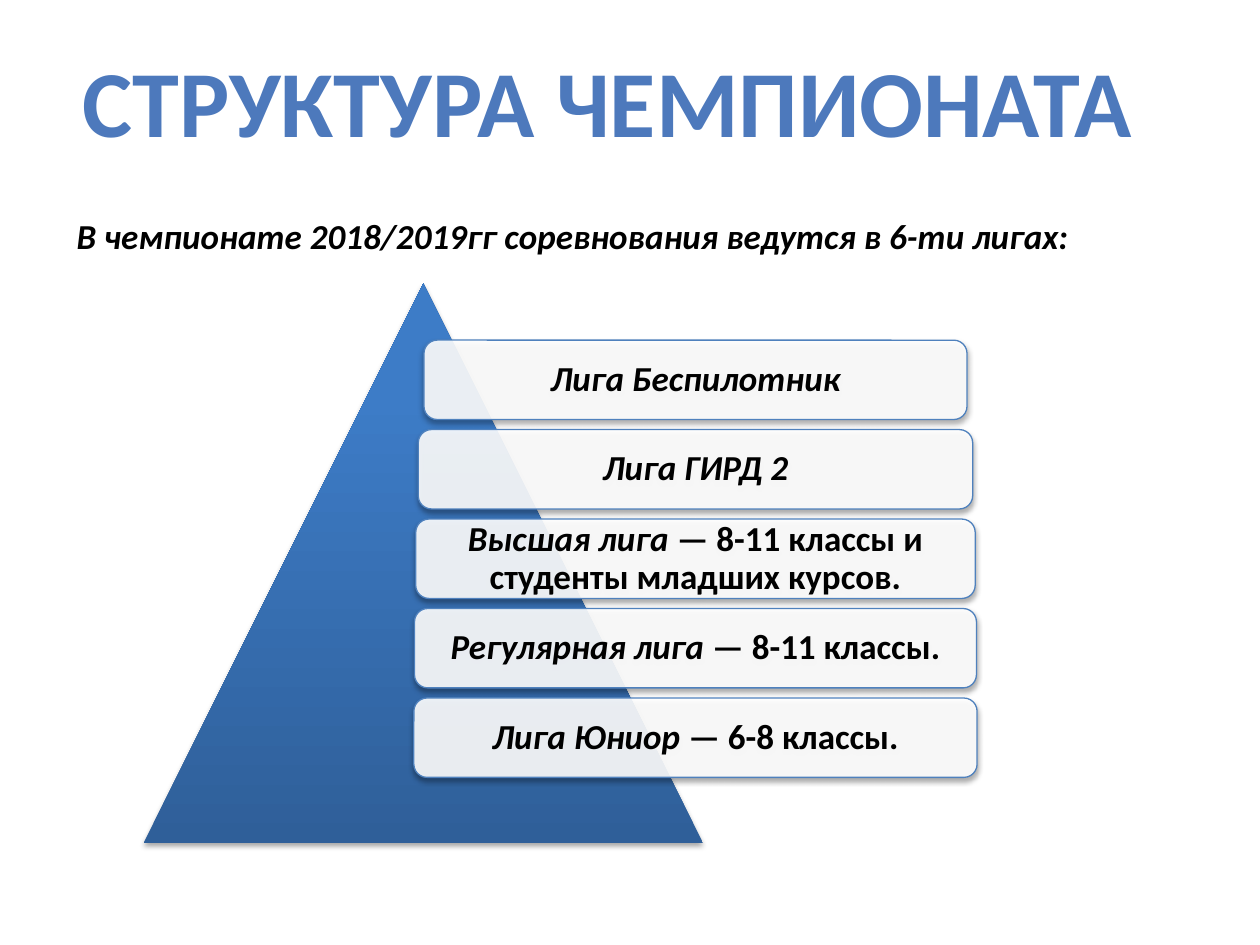
"""Build the championship structure slide: a pyramid with five league cards."""
import lxml.etree
import pptx
import pptx.dml.color
import pptx.enum.shapes
import pptx.enum.text
import pptx.oxml.ns
import pptx.util

Inches = pptx.util.Inches
Pt = pptx.util.Pt
RGBColor = pptx.dml.color.RGBColor
MSO_SHAPE = pptx.enum.shapes.MSO_SHAPE
PP_ALIGN = pptx.enum.text.PP_ALIGN
MSO_ANCHOR = pptx.enum.text.MSO_ANCHOR
qn = pptx.oxml.ns.qn

HEADING = "СТРУКТУРА ЧЕМПИОНАТА"
INTRO = "В чемпионате 2018/2019гг соревнования ведутся в 6-ти лигах:"
LEAGUES = [
    ("Лига Беспилотник", "", 4.31),
    ("Лига ГИРД 2", "", 4.4),
    ("Высшая лига", " — 8-11 классы и студенты младших курсов.", 4.44),
    ("Регулярная лига", " — 8-11 классы.", 4.46),
    ("Лига Юниор", " — 6-8 классы.", 4.47),
]

FONT = "Calibri"
BLACK = RGBColor(0x00, 0x00, 0x00)
WHITE = RGBColor(0xFF, 0xFF, 0xFF)
HEADING_BLUE = RGBColor(0x4D, 0x79, 0xBC)
CARD_BLUE = RGBColor(0x4F, 0x81, 0xBD)
PYRAMID_STOPS = [(0, RGBColor(0x2F, 0x5F, 0x99)), (0.8, RGBColor(0x3D, 0x7C, 0xC7))]

CARD_CENTER, CARD_TOP, CARD_HEIGHT, CARD_PITCH = 5.52, 2.7, 0.63, 0.71


def style_text(paragraph, size, color, italic=False):
    paragraph.font.name = FONT
    paragraph.font.size = Pt(size)
    paragraph.font.bold = True
    paragraph.font.italic = italic
    paragraph.font.color.rgb = color


def add_soft_shadow(shape):
    shape.shadow.inherit = False
    effects = shape._element.spPr.find(qn("a:effectLst"))
    shadow = lxml.etree.SubElement(
        effects, qn("a:outerShdw"), blurRad=str(Pt(3.1)), dist=str(Pt(1.8)),
        dir="5400000", rotWithShape="0")
    black = lxml.etree.SubElement(shadow, qn("a:srgbClr"), val="000000")
    lxml.etree.SubElement(black, qn("a:alpha"), val="35000")


def add_heading(slide):
    heading = slide.shapes.title
    heading.left, heading.top = Inches(0.51), Inches(0.29)
    heading.width, heading.height = Inches(8.62), Inches(1.01)
    frame = heading.text_frame
    frame.text = HEADING
    frame.word_wrap = False
    frame.auto_size = pptx.enum.text.MSO_AUTO_SIZE.NONE
    frame.paragraphs[0].alignment = PP_ALIGN.CENTER
    style_text(frame.paragraphs[0], 54, HEADING_BLUE)


def add_intro(slide):
    intro = slide.shapes.add_textbox(Inches(0.51), Inches(1.65), Inches(9), Inches(0.44))
    frame = intro.text_frame
    frame.text = INTRO
    frame.word_wrap = True
    frame.vertical_anchor = MSO_ANCHOR.MIDDLE
    style_text(frame.paragraphs[0], 20, BLACK, italic=True)


def add_pyramid(slide):
    pyramid = slide.shapes.add_shape(
        MSO_SHAPE.ISOSCELES_TRIANGLE, Inches(1.14), Inches(2.25), Inches(4.44), Inches(4.44))
    pyramid.fill.gradient()
    pyramid.fill.gradient_angle = 90
    for stop, (position, color) in zip(pyramid.fill.gradient_stops, PYRAMID_STOPS):
        stop.position = position
        stop.color.rgb = color
    pyramid.line.fill.background()
    add_soft_shadow(pyramid)


def add_league(slide, index, league, grades, width):
    card = slide.shapes.add_shape(
        MSO_SHAPE.ROUNDED_RECTANGLE,
        Inches(CARD_CENTER - width / 2), Inches(CARD_TOP + index * CARD_PITCH),
        Inches(width), Inches(CARD_HEIGHT))
    card.fill.solid()
    card.fill.fore_color.rgb = WHITE
    white = card._element.spPr.find(qn("a:solidFill")).find(qn("a:srgbClr"))
    lxml.etree.SubElement(white, qn("a:alpha"), val="90000")
    card.line.color.rgb = CARD_BLUE
    card.line.width = Pt(0.75)
    add_soft_shadow(card)

    frame = card.text_frame
    frame.word_wrap = True
    frame.vertical_anchor = MSO_ANCHOR.MIDDLE
    frame.margin_left = frame.margin_right = Inches(0.08)
    frame.margin_top = frame.margin_bottom = 0
    label = frame.paragraphs[0]
    label.alignment = PP_ALIGN.CENTER
    label.line_spacing = 0.9
    style_text(label, 20, BLACK, italic=True)
    label.add_run().text = league
    if grades:
        grades_run = label.add_run()
        grades_run.text = grades
        grades_run.font.italic = False


def main():
    deck = pptx.Presentation()
    deck.slide_width, deck.slide_height = Inches(10), Inches(7.5)
    slide = deck.slides.add_slide(deck.slide_layouts[5])
    add_heading(slide)
    add_intro(slide)
    add_pyramid(slide)
    for index, (league, grades, width) in enumerate(LEAGUES):
        add_league(slide, index, league, grades, width)
    deck.save("out.pptx")


if __name__ == "__main__":
    main()
